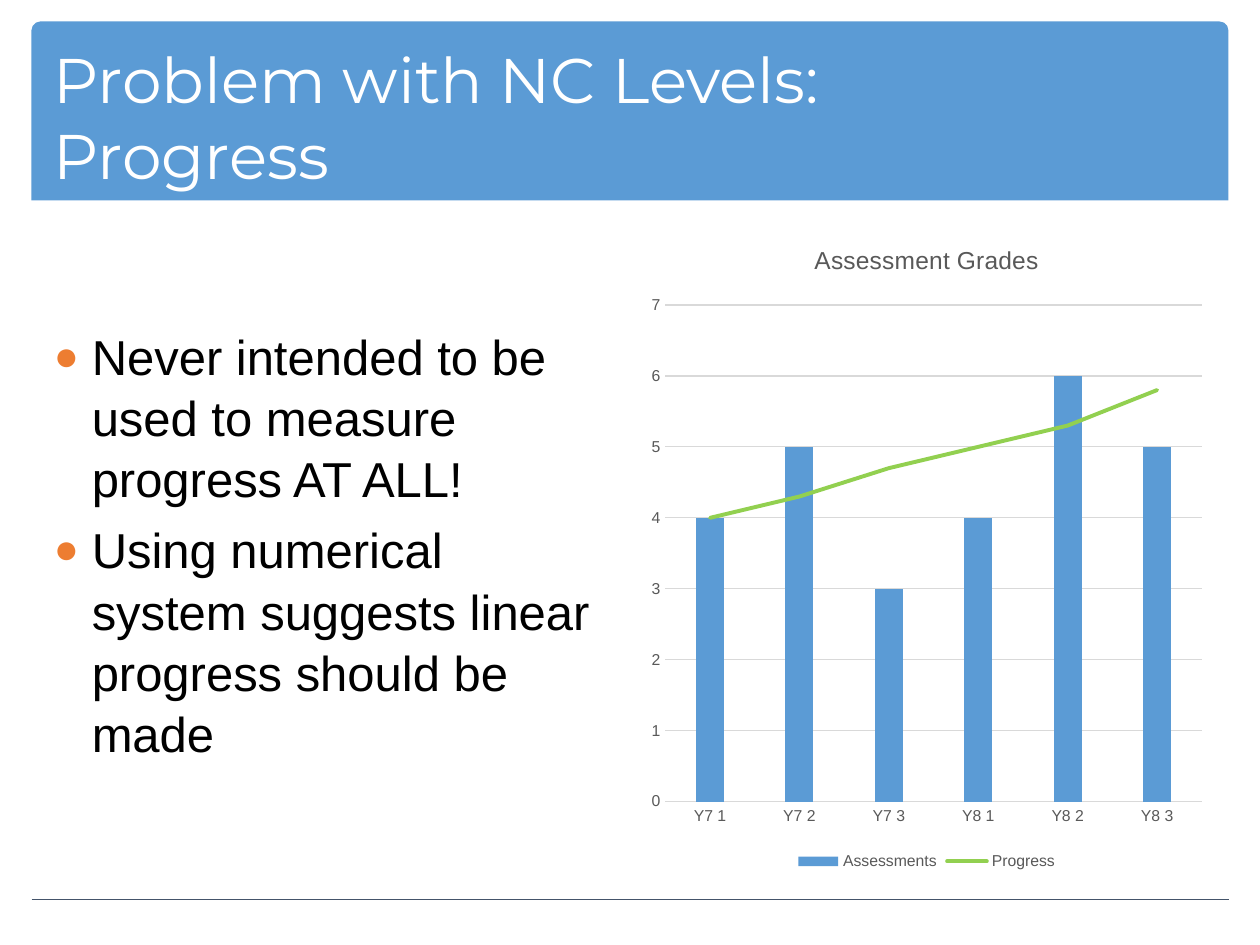
from lxml.etree import SubElement
from pptx import Presentation
from pptx.chart.data import CategoryChartData
from pptx.dml.color import RGBColor
from pptx.enum.chart import (XL_CHART_TYPE, XL_LEGEND_POSITION,
                             XL_MARKER_STYLE, XL_TICK_MARK)
from pptx.enum.shapes import MSO_CONNECTOR, MSO_SHAPE
from pptx.enum.text import MSO_ANCHOR, PP_ALIGN
from pptx.oxml import parse_xml
from pptx.oxml.ns import nsdecls, qn
from pptx.util import Pt

TITLE = "Problem with NC Levels: Progress"
POINTS = [
    "Never intended to be used to measure progress AT ALL!",
    "Using numerical system suggests linear progress should be made",
]
CHART = {
    "title": "Assessment Grades",
    "terms": ["Y7 1", "Y7 2", "Y7 3", "Y8 1", "Y8 2", "Y8 3"],
    "series": {
        "Assessments": [4, 5, 3, 4, 6, 5],
        "Progress": [4, 4.3, 4.7, 5, 5.3, 5.8],
    },
}
THEME = {
    "blue": "5B9BD5", "green": "92D050", "orange": "ED7D31", "navy": "44546A",
    "grey": "595959", "grid": "D9D9D9", "black": "000000", "white": "FFFFFF",
    "head": "Montserrat", "body": "Arial",
    "title": 36, "text": 28, "caption": 14, "label": 9,
}
WIDE, HIGH = 720, 540
EDGE = 18
BANNER = (EDGE, 12.24, WIDE - 2 * EDGE, 102.24)
HEADING = (23.76, 21.6, 455.04, 90)
BODY = (23.76, 179.28, 327.6, 321.12)
GRAPH = (365.76, 126, 327.6, 374.4)
RULE = 514.08
INDENT = 21.6


def color(name):
    return RGBColor.from_string(THEME[name])


def style(font, face, size, hue):
    values = {"name": THEME[face], "size": Pt(THEME[size]), "bold": False}
    for key, value in values.items():
        setattr(font, key, value)
    font.color.rgb = color(hue)


def stroke(line, hue, width):
    line.color.rgb = color(hue)
    line.width = Pt(width)


def place(box):
    return [Pt(n) for n in box]


def add_banner(slide):
    banner = slide.shapes.add_shape(MSO_SHAPE.ROUND_2_SAME_RECTANGLE,
                                    *place(BANNER))
    banner.adjustments[0] = 0.05
    banner.adjustments[1] = 0
    banner.shadow.inherit = False
    banner.fill.solid()
    banner.fill.fore_color.rgb = color("blue")
    banner.line.fill.background()


def add_rule(slide):
    rule = slide.shapes.add_connector(
        MSO_CONNECTOR.STRAIGHT, *place((EDGE, RULE, WIDE - EDGE, RULE)))
    stroke(rule.line, "navy", 1)
    SubElement(rule._element.spPr, qn("a:effectLst"))


def add_title(slide):
    frame = slide.shapes.add_textbox(*place(HEADING)).text_frame
    frame.word_wrap = True
    frame.vertical_anchor = MSO_ANCHOR.MIDDLE
    para = frame.paragraphs[0]
    para.text = TITLE
    style(para.font, "head", "title", "white")


def add_bullet(para):
    props = para._p.get_or_add_pPr()
    props.set("marL", str(Pt(INDENT)))
    props.set("indent", str(-Pt(INDENT)))
    hue = SubElement(props, qn("a:buClr"))
    SubElement(hue, qn("a:srgbClr"), val=THEME["orange"])
    SubElement(props, qn("a:buSzPct"), val="85000")
    SubElement(props, qn("a:buFont"), typeface=THEME["body"])
    SubElement(props, qn("a:buChar"), char="●")


def add_points(slide):
    frame = slide.shapes.add_textbox(*place(BODY)).text_frame
    frame.word_wrap = True
    frame.margin_top = Pt(6)
    for i, text in enumerate(POINTS):
        para = frame.paragraphs[0] if i == 0 else frame.add_paragraph()
        para.text = text
        para.alignment = PP_ALIGN.LEFT
        para.line_spacing = 1.04
        if i:
            para.space_before = Pt(5.6)
        add_bullet(para)
        style(para.font, "body", "text", "black")


def split_line(chart):
    """Move the last column series to a line plot on the same axes."""
    bars = chart.plots[0]._element
    series = bars.findall(qn("c:ser"))[-1]
    for flag in series.findall(qn("c:invertIfNegative")):
        series.remove(flag)
    line = parse_xml(f'<c:lineChart {nsdecls("c")}><c:grouping val="standard"/>'
                     '<c:varyColors val="0"/></c:lineChart>')
    line.append(series)
    SubElement(line, qn("c:marker"), val="1")
    for axis in bars.findall(qn("c:axId")):
        SubElement(line, qn("c:axId"), val=axis.get("val"))
    bars.addnext(line)


def style_axes(chart):
    for axis in (chart.category_axis, chart.value_axis):
        axis.major_tick_mark = axis.minor_tick_mark = XL_TICK_MARK.NONE
        style(axis.tick_labels.font, "body", "label", "grey")
    stroke(chart.category_axis.format.line, "grid", 0.75)
    scale = chart.value_axis
    values = {"minimum_scale": 0, "maximum_scale": 7, "major_unit": 1,
              "has_major_gridlines": True}
    for key, value in values.items():
        setattr(scale, key, value)
    scale.format.line.fill.background()
    stroke(scale.major_gridlines.format.line, "grid", 0.75)


def add_graph(slide):
    data = CategoryChartData()
    data.categories = CHART["terms"]
    for name, grades in CHART["series"].items():
        data.add_series(name, grades)
    chart = slide.shapes.add_chart(XL_CHART_TYPE.COLUMN_CLUSTERED,
                                   *place(GRAPH), data).chart
    style(chart.font, "body", "label", "grey")
    split_line(chart)

    bars, line = chart.plots
    for key, value in {"gap_width": 219, "overlap": -27,
                       "vary_by_categories": False}.items():
        setattr(bars, key, value)
    fill = bars.series[0].format.fill
    fill.solid()
    fill.fore_color.rgb = color("blue")
    trend = line.series[0]
    trend.smooth = False
    trend.marker.style = XL_MARKER_STYLE.NONE
    stroke(trend.format.line, "green", 2.25)
    trend.format.line._ln.set("cap", "rnd")

    style_axes(chart)
    chart.has_title = True
    title = chart.chart_title
    title.include_in_layout = False
    title.text_frame.text = CHART["title"]
    style(title.text_frame.paragraphs[0].runs[0].font,
          "body", "caption", "grey")
    chart.has_legend = True
    chart.legend.position = XL_LEGEND_POSITION.BOTTOM
    chart.legend.include_in_layout = False
    style(chart.legend.font, "body", "label", "grey")


def main():
    deck = Presentation()
    deck.slide_width, deck.slide_height = Pt(WIDE), Pt(HIGH)
    slide = deck.slides.add_slide(deck.slide_layouts[6])
    for add in (add_banner, add_rule, add_title, add_points, add_graph):
        add(slide)
    deck.save("out.pptx")


if __name__ == "__main__":
    main()
